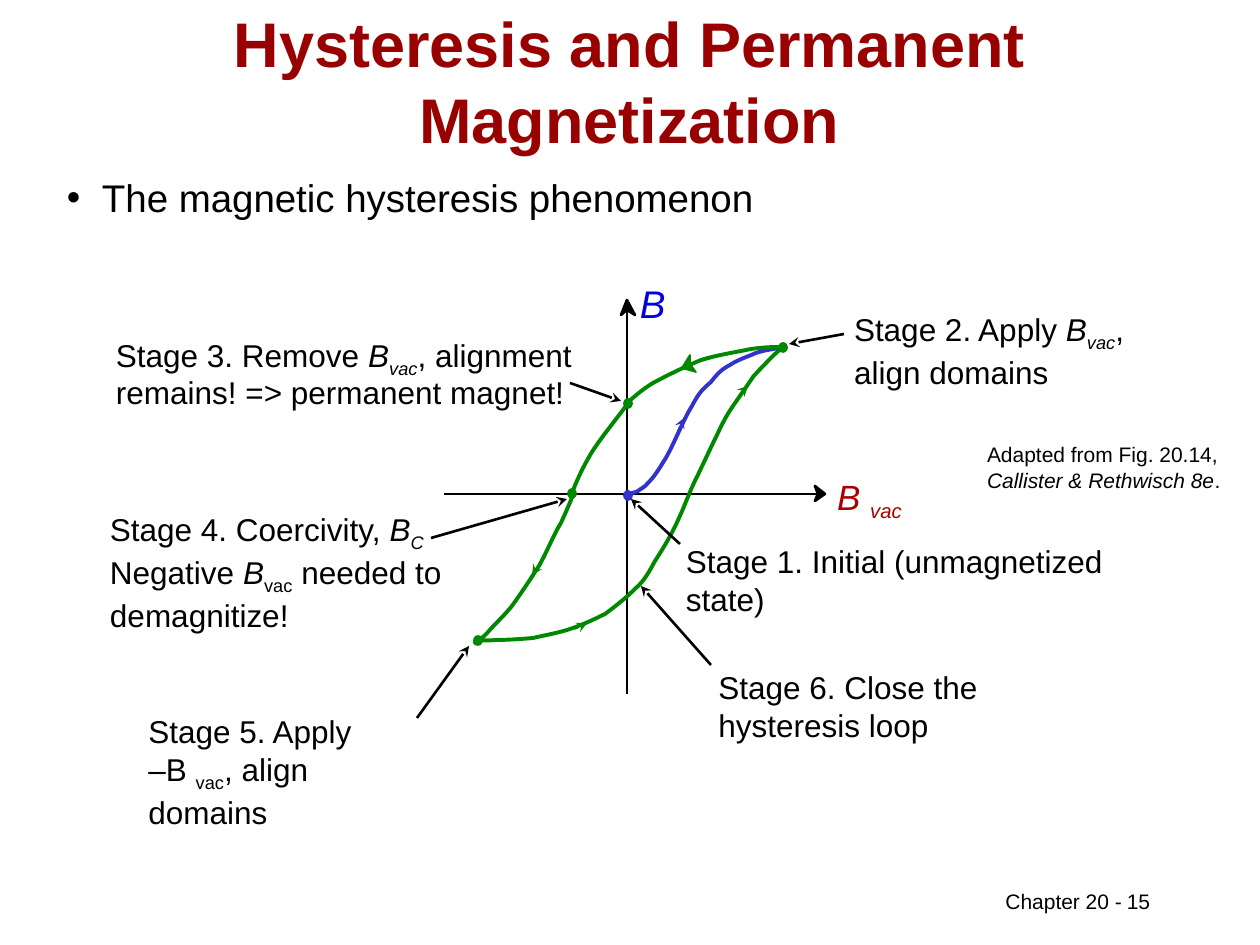
from pptx import Presentation, util as u
from pptx.dml.color import RGBColor
from pptx.enum import shapes, text
from pptx.oxml import ns
from lxml import etree

BLACK = RGBColor(0, 0, 0)
WINE = RGBColor(0x99, 0, 0)
RED = RGBColor(0xAA, 0, 0)
BLUE = RGBColor(0, 0, 0xDD)
NAVY = RGBColor(0x33, 0x33, 0xCC)
GREEN = RGBColor(0, 0x88, 0)
PX = 914400 / 126

deck = Presentation()
deck.slide_width = u.Inches(10)
deck.slide_height = u.Inches(7.5)
slide = deck.slides.add_slide(deck.slide_layouts[6])
parts = slide.shapes


def draw(kind, data, color, width):
    if kind in ("line", "arrow"):
        item = parts.add_connector(shapes.MSO_CONNECTOR.STRAIGHT, *[round(v * PX) for v in data])
        etree.SubElement(item._element.spPr, ns.qn("a:effectLst"))
    elif kind == "dot":
        x, y = data
        item = parts.add_shape(shapes.MSO_SHAPE.OVAL, *[round(v * PX) for v in (x, y, 8, 9)])
    else:
        form = parts.build_freeform(*data[0], scale=PX)
        form.add_line_segments(data[1:], close=kind == "head")
        item = form.convert_to_shape()
    if kind in ("dot", "head", "curve"):
        item.shadow.inherit = False
        if kind == "curve":
            item.fill.background()
        else:
            item.fill.solid()
            item.fill.fore_color.rgb = color
    item.line.color.rgb = color
    item.line.width = u.Pt(width)
    if kind == "arrow":
        etree.SubElement(item.line._get_or_add_ln(), ns.qn("a:tailEnd"), type="stealth")
    if kind == "curve":
        legs = list(item._element.iter(ns.qn("a:lnTo")))
        for a, b, c in zip(legs[::3], legs[1::3], legs[2::3]):
            a.tag = ns.qn("a:cubicBezTo")
            for leg in (b, c):
                a.append(leg[0])
                leg.getparent().remove(leg)


def write(box, runs, size=18, color=BLACK, wrap=True, inset=False, bold=False):
    frame = parts.add_textbox(*[round(v * PX) for v in box]).text_frame
    frame.word_wrap = wrap
    if not inset:
        frame.margin_left = frame.margin_right = frame.margin_top = frame.margin_bottom = 0
    para = frame.paragraphs[0]
    for words, style in runs:
        for n, line in enumerate(words.split("\n")):
            if n:
                para.add_line_break()
            if not line:
                continue
            run = para.add_run()
            run.text = line
            run.font.name = "Arial"
            run.font.size = u.Pt(size)
            run.font.color.rgb = color
            run.font.bold = bold
            run.font.italic = "i" in style
            if "s" in style:
                run._r.get_or_add_rPr().set("baseline", "-25000")
    return frame


title = write((94, 44, 1071, 73), [("Hysteresis and Permanent Magnetization", "")],
              36, WINE, inset=True, bold=True)
title.vertical_anchor = text.MSO_ANCHOR.MIDDLE
title.paragraphs[0].alignment = text.PP_ALIGN.CENTER

point = write((67, 174, 1111, 47), [("The magnetic hysteresis phenomenon", "")], 22)
props = point.paragraphs[0]._p.get_or_add_pPr()
props.set("marL", str(round(35 * PX)))
props.set("indent", str(round(-35 * PX)))
etree.SubElement(props, ns.qn("a:buFont"), typeface="Arial")
etree.SubElement(props, ns.qn("a:buChar"), char="•")

write((993, 882, 144, 38), [("Chapter 20 -", "")], 12, wrap=False, inset=True)
page = write((1057, 882, 163, 49), [("15", "")], 12, inset=True)
page.paragraphs[0].alignment = text.PP_ALIGN.CENTER
write((987, 442, 244, 50), [("Adapted from Fig. 20.14, ", ""),
                            ("Callister & Rethwisch 8e", "i"), (".", "")], 12)
write((837, 475, 69, 43), [("B ", "i"), ("vac", "is")], 20, RED, wrap=False)
write((640, 280, 25, 47), [("B", "i")], 22, BLUE, wrap=False)

write((686, 542, 480, 76), [("Stage 1. Initial (unmagnetized state)", "")])
write((854, 310, 286, 77), [("Stage 2. Apply ", ""), ("B", "i"), ("vac", "is"),
                            (", \nalign domains", "")], wrap=False)
write((116, 336, 473, 38), [("Stage 3. Remove ", ""), ("B", "i"), ("vac", "is"),
                            (", alignment", "")], wrap=False)
write((116, 373, 449, 38), [("remains! => permanent magnet!", "")], wrap=False)
write((110, 510, 357, 113), [("Stage 4. Coercivity, ", ""), ("B", "i"), ("C\n", "is"),
                             ("Negative ", ""), ("B", "i"), ("vac", "s"),
                             (" needed to demagnitize!", "")])
write((136, 706, 300, 127), [("Stage 5. Apply \n–B ", ""), ("vac", "s"),
                             (", align domains", "")], inset=True)
write((706, 662, 309, 88), [("Stage 6. Close the hysteresis loop", "")], inset=True)

draw("line", (627, 310, 627, 694), BLACK, 1.5)
draw("line", (444, 494, 818, 494), BLACK, 1.5)
draw("head", [(627, 300), (635, 315), (627, 310), (621, 315)], BLACK, 1.5)
draw("head", [(825, 494), (815, 501), (818, 494), (815, 486)], BLACK, 1.5)

curves = [
    (GREEN, [(572, 493), (577, 480), (583, 467), (592, 452), (601, 438), (614, 422), (626, 406)]),
    (GREEN, [(474, 640), (480, 640), (486, 641), (496, 640), (507, 640), (522, 639), (533, 638),
             (546, 635), (558, 633), (570, 629), (582, 625), (593, 620), (605, 614),
             (616, 606), (627, 597), (636, 588), (645, 580), (649, 572), (655, 561),
             (663, 549), (673, 532), (679, 518), (685, 505), (688, 496), (694, 483),
             (701, 469), (711, 447), (717, 435), (723, 422), (727, 415), (733, 406),
             (740, 396), (747, 386), (753, 377), (760, 369), (769, 360), (774, 355),
             (779, 350), (781, 349), (785, 347)]),
    (NAVY, [(629, 494), (631, 493), (634, 493), (638, 491), (640, 489), (644, 488), (648, 483),
            (653, 478), (656, 474), (664, 461), (672, 449), (684, 418), (692, 406),
            (699, 392), (704, 388), (711, 382), (717, 374), (722, 369), (730, 365),
            (737, 360), (747, 357), (756, 353), (765, 350), (774, 349), (784, 347)]),
    (GREEN, [(627, 403), (634, 397), (640, 391), (653, 383), (664, 377), (684, 367), (701, 360),
             (717, 355), (737, 352), (751, 349), (765, 347), (774, 347), (784, 347)]),
    (GREEN, [(573, 495), (570, 503), (566, 512), (561, 523), (554, 534), (547, 552), (539, 566),
             (530, 580), (520, 595), (512, 606), (504, 616), (495, 624), (489, 631),
             (483, 638), (479, 640), (474, 644)]),
]
for color, points in curves:
    draw("curve", points, color, 2.25)

draw("head", [(682, 368), (690, 355), (690, 364), (696, 372)], GREEN, 1)
draw("line", (690, 364, 712, 358), GREEN, 1)
for ends, color in [((575, 629, 587, 623), GREEN), ((740, 394, 748, 386), GREEN),
                    ((538, 566, 532, 575), GREEN), ((678, 431, 684, 418), NAVY)]:
    draw("arrow", ends, color, 1)

for ends in [(680, 544, 631, 499), (844, 334, 789, 344), (570, 383, 621, 401),
             (431, 538, 567, 499), (417, 718, 469, 646), (711, 665, 641, 586)]:
    draw("arrow", ends, BLACK, 1.5)

for spot, color in [((624, 491), NAVY), ((568, 489), GREEN), ((624, 399), GREEN),
                    ((779, 343), GREEN), ((474, 636), GREEN)]:
    draw("dot", spot, color, 1)

deck.save("out.pptx")
